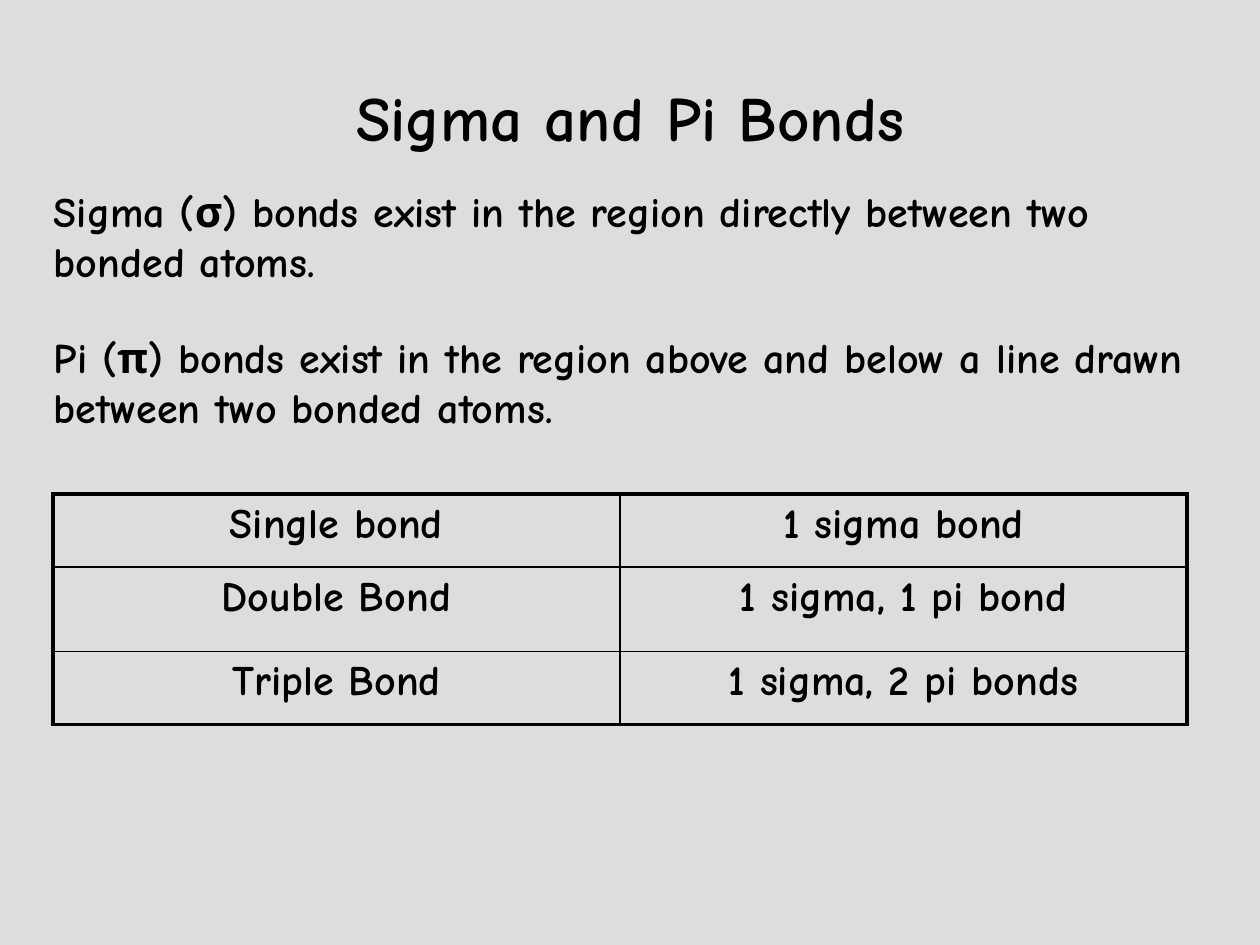
import dataclasses

import lxml.etree
import pptx
import pptx.dml.color
import pptx.enum.text
import pptx.oxml.ns
import pptx.util

Inches = pptx.util.Inches
FONT = "Comic Neue"
INK = "000000"
THICK, THIN = 2.25, 1


@dataclasses.dataclass
class Note:
    top: float
    text: str


NOTES = [
    Note(1.42, "Sigma (σ) bonds exist in the region directly between two bonded atoms."),
    Note(2.58, "Pi (π) bonds exist in the region above and below a line drawn between two bonded atoms."),
]
BONDS = [
    ("Single bond", "1 sigma bond"),
    ("Double Bond", "1 sigma, 1 pi bond"),
    ("Triple Bond", "1 sigma, 2 pi bonds"),
]
ROWS = [0.58, 0.67, 0.58]
COLS = [4.5, 4.5]


def color(code: str) -> pptx.dml.color.RGBColor:
    return pptx.dml.color.RGBColor.from_string(code)


def write(frame, text: str, size: int, center: bool = False) -> None:
    frame.text = text
    frame.word_wrap = True
    para = frame.paragraphs[0]
    para.font.name = FONT
    para.font.size = pptx.util.Pt(size)
    para.font.bold = True
    para.font.color.rgb = color(INK)
    if center:
        para.alignment = pptx.enum.text.PP_ALIGN.CENTER


def border(cell, widths: dict[str, float]) -> None:
    props = cell._tc.get_or_add_tcPr()
    qn = pptx.oxml.ns.qn
    for side, width in widths.items():
        line = lxml.etree.SubElement(props, qn(f"a:ln{side}"), w=str(pptx.util.Pt(width)))
        fill = lxml.etree.SubElement(line, qn("a:solidFill"))
        lxml.etree.SubElement(fill, qn("a:srgbClr"), val=INK)


def add_note(slide, note: Note) -> None:
    box = slide.shapes.add_textbox(Inches(0.33), Inches(note.top), Inches(9.18), Inches(0.9))
    write(box.text_frame, note.text, 24)
    box.text_frame.auto_size = pptx.enum.text.MSO_AUTO_SIZE.SHAPE_TO_FIT_TEXT


def add_bonds(slide) -> None:
    table = slide.shapes.add_table(
        len(ROWS), len(COLS), Inches(0.42), Inches(3.92), Inches(sum(COLS)), Inches(sum(ROWS))
    ).table
    table.first_row = False
    table.horz_banding = False
    for col, width in zip(table.columns, COLS):
        col.width = Inches(width)
    for r, (row, height) in enumerate(zip(table.rows, ROWS)):
        row.height = Inches(height)
        for c, cell in enumerate(row.cells):
            write(cell.text_frame, BONDS[r][c], 24, center=True)
            edges = {
                "L": c == 0,
                "R": c == len(COLS) - 1,
                "T": r == 0,
                "B": r == len(ROWS) - 1,
            }
            border(cell, {side: THICK if outer else THIN for side, outer in edges.items()})
            cell.fill.background()


def main() -> None:
    deck = pptx.Presentation()
    deck.slide_width, deck.slide_height = Inches(10), Inches(7.5)
    slide = deck.slides.add_slide(deck.slide_layouts[5])
    slide.background.fill.solid()
    slide.background.fill.fore_color.rgb = color("DDDDDD")

    title = slide.shapes.title
    title.left, title.top = Inches(0.5), Inches(0.3)
    title.width, title.height = Inches(9), Inches(1.25)
    write(title.text_frame, "Sigma and Pi Bonds", 36, center=True)
    title.text_frame.vertical_anchor = pptx.enum.text.MSO_ANCHOR.MIDDLE

    for note in NOTES:
        add_note(slide, note)
    add_bonds(slide)
    deck.save("out.pptx")


if __name__ == "__main__":
    main()
